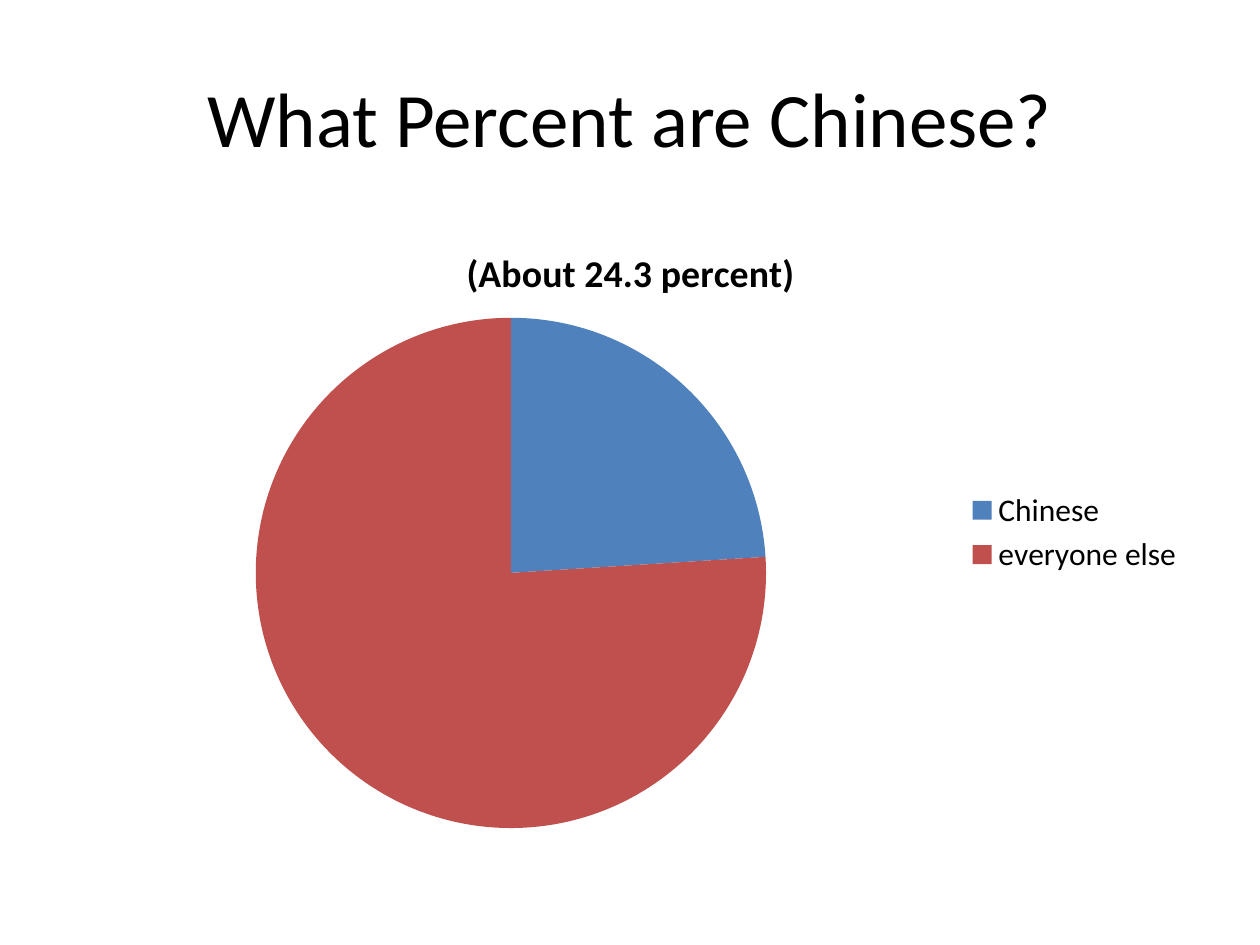
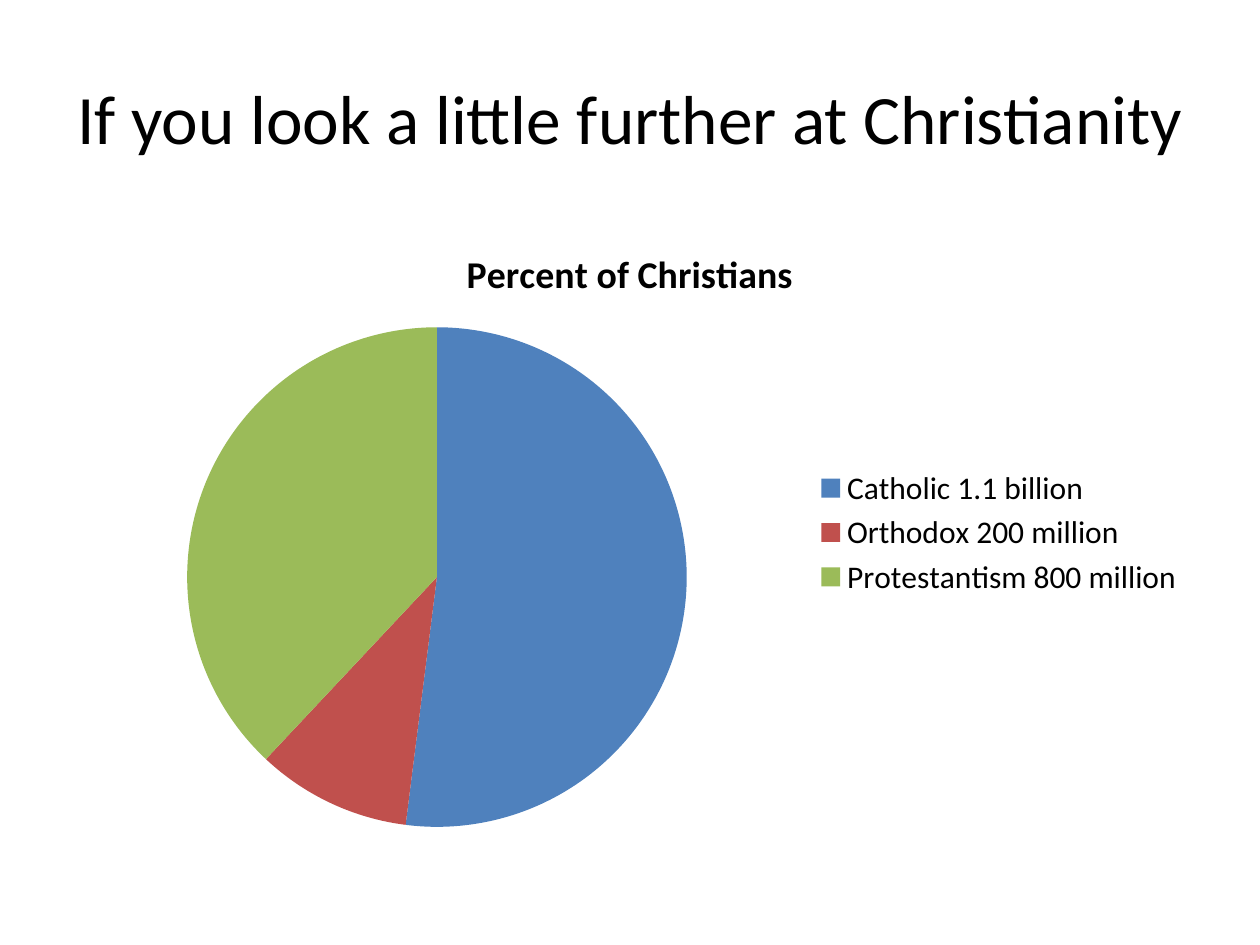
from lxml import etree
from pptx import Presentation
from pptx import util as u
from pptx.chart.data import CategoryChartData
from pptx.dml.color import RGBColor
from pptx.enum import chart as ch, text
from pptx.oxml import ns

BLACK = RGBColor(0x00, 0x00, 0x00)
BLUE = RGBColor(0x4F, 0x81, 0xBD)
RED = RGBColor(0xC0, 0x50, 0x4D)
GREEN = RGBColor(0x9B, 0xBB, 0x59)

SLIDE_WIDTH, SLIDE_HEIGHT = u.Cm(25.4), u.Cm(19.05)
MARGIN = u.Cm(1.27)
CONTENT_WIDTH = SLIDE_WIDTH - 2 * MARGIN


def place(element, **fractions):
    """Fix a chart part at fractions of the chart's width and height."""
    layout = element.find(ns.qn("c:layout"))
    if layout is None:
        layout = etree.Element(ns.qn("c:layout"))
        text_part = element.find(ns.qn("c:tx"))
        if text_part is None:
            element.insert(0, layout)
        else:
            text_part.addnext(layout)
    for child in list(layout):
        layout.remove(child)
    manual = etree.SubElement(layout, ns.qn("c:manualLayout"))
    settings = {"xMode": "edge", "yMode": "edge", **fractions}
    if "w" in fractions:
        settings = {"layoutTarget": "inner", **settings}
    for tag, value in settings.items():
        etree.SubElement(manual, ns.qn(f"c:{tag}")).set("val", str(value))


class Deck:
    """Holds the shared style and the slide being built."""

    font_name = "Calibri"
    slice_colors = (BLUE, RED, GREEN)

    def __init__(self):
        self.presentation = Presentation()
        self.presentation.slide_width = SLIDE_WIDTH
        self.presentation.slide_height = SLIDE_HEIGHT
        self.slide = None

    def new_slide(self):
        blank = self.presentation.slide_layouts[6]
        self.slide = self.presentation.slides.add_slide(blank)

    def style_font(self, font, size, bold=False):
        font.color.rgb = BLACK
        values = {"name": self.font_name, "size": u.Pt(size), "bold": bold}
        for attribute, value in values.items():
            setattr(font, attribute, value)

    def heading(self, wording, size):
        box = self.slide.shapes.add_textbox(
            MARGIN, u.Cm(0.76), CONTENT_WIDTH, u.Cm(3.18))
        frame = box.text_frame
        layout = {"word_wrap": True, "vertical_anchor": text.MSO_ANCHOR.MIDDLE}
        for attribute, value in layout.items():
            setattr(frame, attribute, value)
        paragraph = frame.paragraphs[0]
        paragraph.alignment = text.PP_ALIGN.CENTER
        run = paragraph.add_run()
        run.text = wording
        self.style_font(run.font, size)

    def pie(self, caption, series_name, shares):
        """Draw shares, a dict of category to percent, as a captioned pie."""
        data = CategoryChartData()
        data.categories = list(shares)
        data.add_series(series_name, list(shares.values()))
        pie = self.slide.shapes.add_chart(
            ch.XL_CHART_TYPE.PIE, MARGIN, u.Cm(4.45),
            CONTENT_WIDTH, u.Cm(12.57), data).chart
        self.style_font(pie.font, 18)

        pie.has_title = True
        caption_paragraph = pie.chart_title.text_frame.paragraphs[0]
        caption_run = caption_paragraph.add_run()
        caption_run.text = caption
        self.style_font(caption_run.font, 21.6, bold=True)

        pie.has_legend = True
        placement = {"position": ch.XL_LEGEND_POSITION.RIGHT,
                     "include_in_layout": False}
        for attribute, value in placement.items():
            setattr(pie.legend, attribute, value)

        plot = pie.plots[0]
        plot.vary_by_categories = True
        for index, color in zip(range(len(shares)), self.slice_colors):
            fill = plot.series[0].points[index].format.fill
            fill.solid()
            fill.fore_color.rgb = color
        return pie


def main():
    deck = Deck()

    deck.new_slide()
    deck.heading("What Percent are Chinese?", 44)
    population = deck.pie("(About 24.3 percent)", "Series 1",
                          {"Chinese": 24, "everyone else": 76})
    place(population.chart_title._element, x=0.35, y=0.03)
    plot_area = population._chartSpace.chart.plotArea
    place(plot_area, x=0.17, y=0.15, w=0.45, h=0.83)

    deck.new_slide()
    deck.heading("If you look a little further at Christianity", 39.6)
    deck.pie("Percent of Christians", "Percent of Christians",
             {"Catholic 1.1 billion": 52,
              "Orthodox 200 million": 10,
              "Protestantism 800 million": 38})

    deck.presentation.save("out.pptx")


if __name__ == "__main__":
    main()
